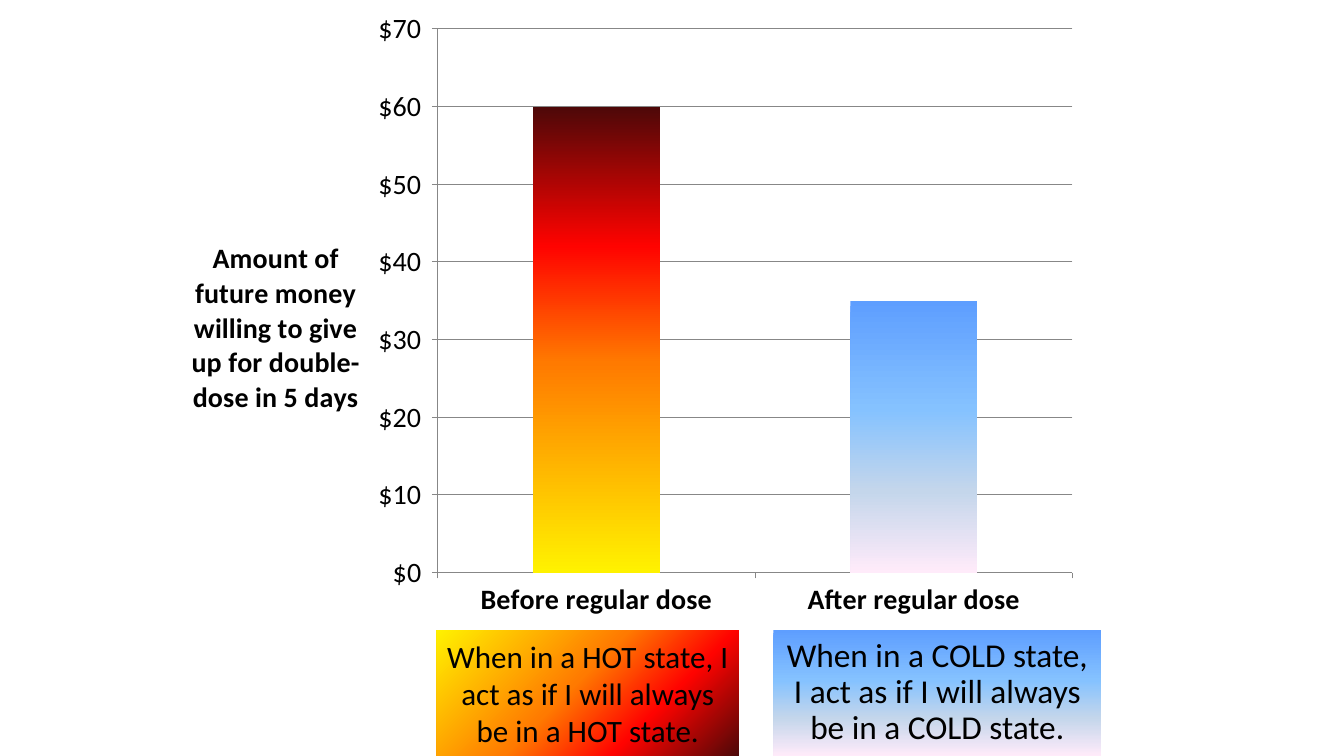
from lxml import etree
from pptx import Presentation
from pptx import util as u
from pptx.chart.data import CategoryChartData
from pptx.dml.color import RGBColor
from pptx.enum import chart as charts, shapes, text
from pptx.oxml import parse_xml
from pptx.oxml.ns import qn

WIDTH, HEIGHT = 13.33, 7.5
CHART_HEIGHT = HEIGHT * 5 / 6
FONT = "Calibri"
COLORS = {"text": "000000", "line": "878787", "bar": "4F81BD"}
HOT = [(0, "FFF200"), (45, "FF7A00"), (70, "FF0300"), (100, "4D0808")]
COLD = [(0, "5E9EFF"), (40, "85C2FF"), (70, "C4D6EB"), (100, "FFEBFA")]
DRAWING = "http://schemas.openxmlformats.org/drawingml/2006/main"
DOLLARS = '"$"#,##0_);[Red]\\("$"#,##0\\)'


def color(name):
    return RGBColor.from_string(COLORS[name])


def style_font(font, size, bold=False):
    font.name = FONT
    font.size = u.Pt(size)
    font.bold = bold
    font.color.rgb = color("text")


def write_text(frame, wording, size, bold=False, spacing=None):
    paragraph = frame.paragraphs[0]
    paragraph.alignment = text.PP_ALIGN.CENTER
    if spacing:
        paragraph.line_spacing = spacing
    run = paragraph.add_run()
    run.text = wording
    style_font(run.font, size, bold)


def fill_gradient(fill, properties, stops, angle=None):
    fill.solid()
    solid = properties.find(qn("a:solidFill"))
    marks = "".join(
        f'<a:gs pos="{share * 1000}"><a:srgbClr val="{tone}"/></a:gs>'
        for share, tone in stops
    )
    if angle is None:
        direction = '<a:path path="circle"><a:fillToRect r="100000" b="100000"/></a:path>'
    else:
        direction = f'<a:lin ang="{angle * 60000}" scaled="0"/>'
    gradient = parse_xml(
        f'<a:gradFill xmlns:a="{DRAWING}" rotWithShape="1">'
        f"<a:gsLst>{marks}</a:gsLst>{direction}</a:gradFill>"
    )
    properties.replace(solid, gradient)


def place_layout(parent, position, inner=False, **shares):
    old = parent.find(qn("c:layout"))
    if old is not None:
        parent.remove(old)
    layout = etree.Element(qn("c:layout"))
    manual = etree.SubElement(layout, qn("c:manualLayout"))
    settings = {"layoutTarget": "inner"} if inner else {}
    settings.update(xMode="edge", yMode="edge", **shares)
    for name, value in settings.items():
        etree.SubElement(manual, qn(f"c:{name}")).set("val", str(value))
    parent.insert(position, layout)


def style_axis(axis, bold=False):
    style_font(axis.tick_labels.font, 20, bold)
    axis.major_tick_mark = charts.XL_TICK_MARK.OUTSIDE
    axis.minor_tick_mark = charts.XL_TICK_MARK.NONE
    axis.format.line.color.rgb = color("line")
    axis.format.line.width = u.Pt(0.75)


def add_dose_chart(slide, left, top, width, height):
    data = CategoryChartData()
    data.categories = ["Before regular dose", "After regular dose"]
    data.add_series("Series 1", (60, 35))
    chart = slide.shapes.add_chart(
        charts.XL_CHART_TYPE.COLUMN_CLUSTERED,
        u.Inches(left), u.Inches(top), u.Inches(width), u.Inches(height), data,
    ).chart
    chart.has_legend = False
    chart.has_title = False
    style_font(chart.font, 10)

    plot = chart.plots[0]
    plot.gap_width = 150
    plot.vary_by_categories = False
    series = plot.series[0]
    series.format.fill.solid()
    series.format.fill.fore_color.rgb = color("bar")
    for index, (stops, angle) in enumerate([(HOT, 270), (COLD, 90)]):
        point = series.points[index]
        fill = point.format.fill
        fill.solid()
        properties = series._element.findall(qn("c:dPt"))[index].find(qn("c:spPr"))
        fill_gradient(fill, properties, stops, angle)

    style_axis(chart.category_axis, bold=True)
    axis = chart.value_axis
    style_axis(axis)
    axis.minimum_scale, axis.maximum_scale, axis.major_unit = 0, 70, 10
    axis.tick_labels.number_format = DOLLARS
    axis.tick_labels.number_format_is_linked = False
    axis.has_major_gridlines = True
    axis.major_gridlines.format.line.color.rgb = color("line")
    axis.major_gridlines.format.line.width = u.Pt(0.75)

    title = axis.axis_title
    write_text(
        title.text_frame,
        "Amount of future money willing to give up for double-dose in 5 days",
        20, bold=True,
    )
    body = title._element.find(".//" + qn("a:bodyPr"))
    body.set("rot", "0")
    body.set("vert", "horz")
    place_layout(title._element, 1, x=0.02, y=0.37)
    area = chart._chartSpace.find(".//" + qn("c:plotArea"))
    place_layout(area, 0, inner=True, x=0.292, y=0.046, w=0.687, h=0.863)


def add_state_box(slide, left, top, width, height, wording, size, stops,
                  angle=None, spacing=None):
    shape = slide.shapes.add_shape(
        shapes.MSO_SHAPE.RECTANGLE,
        u.Inches(left), u.Inches(top), u.Inches(width), u.Inches(height),
    )
    shape.shadow.inherit = False
    shape.line.fill.background()
    fill_gradient(shape.fill, shape._element.spPr, stops, angle)
    frame = shape.text_frame
    frame.word_wrap = True
    frame.vertical_anchor = text.MSO_ANCHOR.MIDDLE
    write_text(frame, wording, size, spacing=spacing)


def main():
    presentation = Presentation()
    presentation.slide_width = u.Inches(WIDTH)
    presentation.slide_height = u.Inches(HEIGHT)
    slide = presentation.slides.add_slide(presentation.slide_layouts[6])
    box_height = HEIGHT - CHART_HEIGHT
    add_state_box(
        slide, 4.33, CHART_HEIGHT, 3, box_height,
        "When in a HOT state, I act as if I will always be in a HOT state.",
        22.2, HOT,
    )
    add_dose_chart(slide, WIDTH / 8, 0, WIDTH * 11 / 16, CHART_HEIGHT)
    add_state_box(
        slide, 7.67, CHART_HEIGHT, 3.25, box_height,
        "When in a COLD state, I act as if I will always be in a COLD state.",
        23.8, COLD, angle=90, spacing=0.9,
    )
    presentation.save("out.pptx")


if __name__ == "__main__":
    main()
